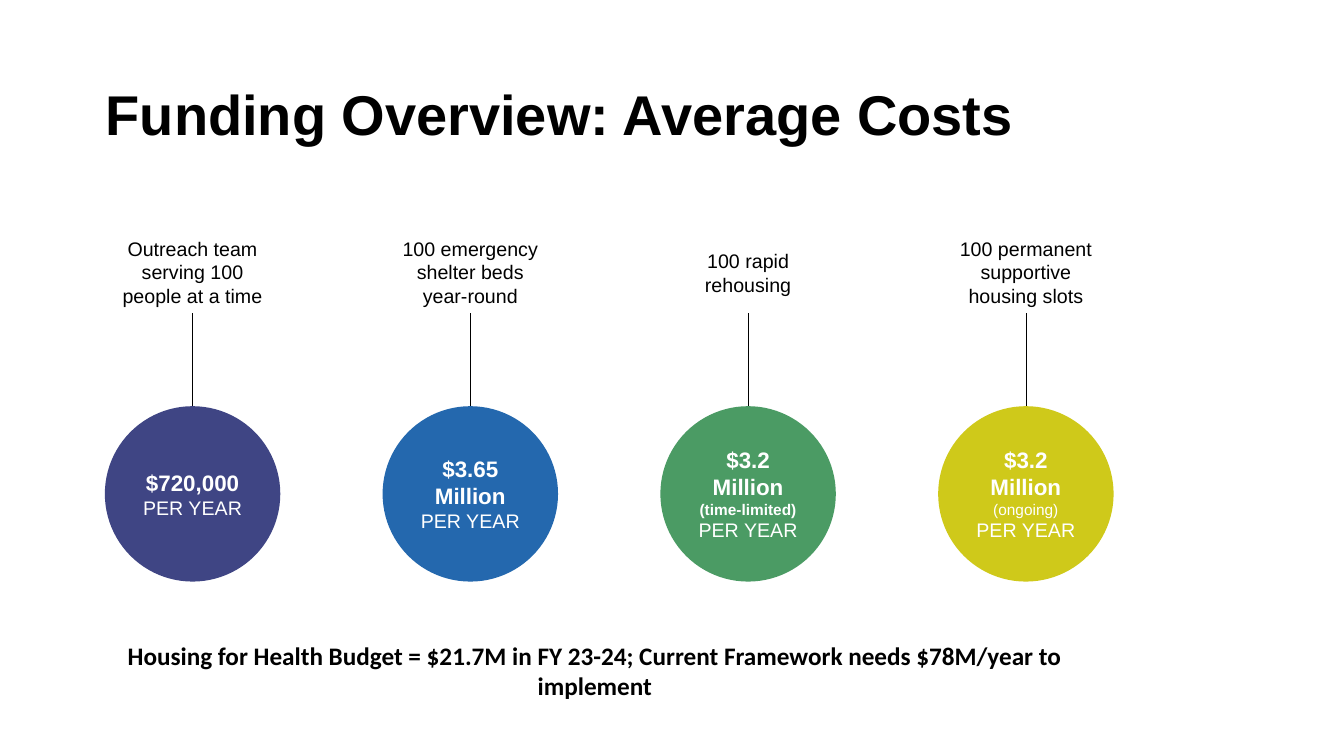
from lxml.etree import SubElement
from pptx import Presentation
from pptx.dml.color import RGBColor
from pptx.enum.shapes import MSO_CONNECTOR, MSO_SHAPE
from pptx.enum.text import MSO_ANCHOR, MSO_AUTO_SIZE, PP_ALIGN
from pptx.oxml.ns import qn
from pptx.util import Inches, Pt

COLORS = {
    "text": "000000",
    "light": "FFFFFF",
    "indigo": "3F4584",
    "blue": "2468AE",
    "green": "4B9B64",
    "yellow": "CFC91A",
}
AMOUNT = {"size": Pt(16), "bold": True}
PERIOD = {"size": Pt(14), "bold": False}
NOTE = {"size": Pt(11), "bold": False}
BOLD_NOTE = {"size": Pt(11), "bold": True}
LABEL = {"size": Pt(14), "bold": False}
PER_YEAR = [("PER YEAR", PERIOD)]

COSTS = [
    ("Outreach team serving 100 people at a time", 0.81, "indigo",
     [[("$720,000", AMOUNT)], PER_YEAR]),
    ("100 emergency shelter beds\nyear-round", 0.81, "blue",
     [[("$3.65 Million", AMOUNT)], PER_YEAR]),
    ("100 rapid\nrehousing", 0.57, "green",
     [[("$3.2 Million ", AMOUNT), ("(time-limited)", BOLD_NOTE)], PER_YEAR]),
    ("100 permanent supportive housing slots", 0.81, "yellow",
     [[("$3.2 Million", AMOUNT)], [("(ongoing)", NOTE)], PER_YEAR]),
]
FIRST_CENTER, STEP = 1.91, 2.755
LABEL_WIDTH, LABEL_MIDDLE = 1.8, 2.705
STEM_TOP, STEM_BOTTOM = 3.11, 4.09
CIRCLE_TOP, DIAMETER = 4.03, 1.74


def write(frame, paragraphs, color, align=PP_ALIGN.CENTER, font="Arial"):
    frame.word_wrap = True
    for index, runs in enumerate(paragraphs):
        paragraph = frame.paragraphs[0] if index == 0 else frame.add_paragraph()
        paragraph.alignment = align
        for text, style in runs:
            for number, line in enumerate(text.split("\n")):
                if number:
                    paragraph.add_line_break()
                run = paragraph.add_run()
                run.text = line
                run.font.name = font
                run.font.color.rgb = RGBColor.from_string(COLORS[color])
                for name, value in style.items():
                    setattr(run.font, name, value)


def add_text(left, top, width, height, text, style, **options):
    box = slide.shapes.add_textbox(
        Inches(left), Inches(top), Inches(width), Inches(height))
    write(box.text_frame, [[(text, style)]], "text", **options)
    box.text_frame.auto_size = MSO_AUTO_SIZE.SHAPE_TO_FIT_TEXT
    return box


presentation = Presentation()
presentation.slide_width = Inches(13.33)
presentation.slide_height = Inches(7.5)
slide = presentation.slides.add_slide(presentation.slide_layouts[6])

add_text(0.95, 0.74, 11.11, 0.77, "Funding Overview: Average Costs",
         {"size": Pt(40), "bold": True}, align=PP_ALIGN.LEFT)

for index, (caption, height, color, amount) in enumerate(COSTS):
    center = FIRST_CENTER + index * STEP
    label = add_text(center - LABEL_WIDTH / 2, LABEL_MIDDLE - height / 2,
                     LABEL_WIDTH, height, caption, LABEL)

    stem = slide.shapes.add_connector(
        MSO_CONNECTOR.STRAIGHT, Inches(center), Inches(STEM_TOP),
        Inches(center), Inches(STEM_BOTTOM))
    if height == 0.81:
        stem.begin_connect(label, 2)
    stem.line.width = Pt(0.5)
    stem.line.color.rgb = RGBColor.from_string(COLORS["text"])
    SubElement(stem.element.spPr, qn("a:effectLst"))

    circle = slide.shapes.add_shape(
        MSO_SHAPE.OVAL, Inches(center - DIAMETER / 2), Inches(CIRCLE_TOP),
        Inches(DIAMETER), Inches(DIAMETER))
    circle.shadow.inherit = False
    circle.fill.solid()
    circle.fill.fore_color.rgb = RGBColor.from_string(COLORS[color])
    circle.line.fill.background()
    circle.text_frame.vertical_anchor = MSO_ANCHOR.MIDDLE
    write(circle.text_frame, amount, "light")

add_text(0.95, 6.3, 9.9, 0.71,
         "Housing for Health Budget = $21.7M in FY 23-24; "
         "Current Framework needs $78M/year to implement",
         {"size": Pt(18), "bold": True}, font="Calibri")

presentation.save("out.pptx")
